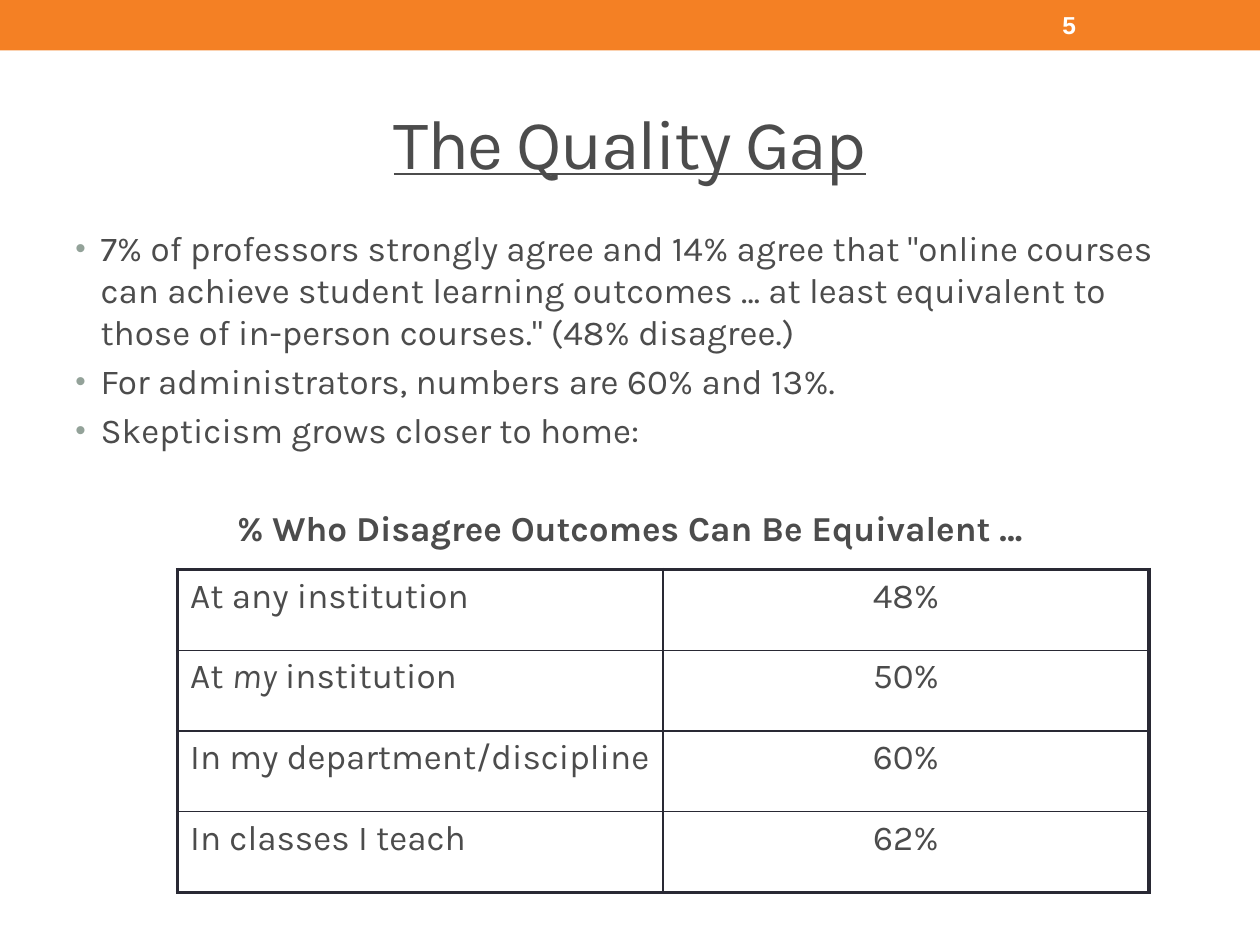
"""Build the quality gap slide with its bullets and table."""
from lxml import etree
from pptx import Presentation
from pptx.dml.color import RGBColor
from pptx.enum.shapes import MSO_SHAPE
from pptx.enum.text import MSO_ANCHOR, PP_ALIGN
from pptx.oxml.ns import qn
from pptx.util import Pt

RECT = MSO_SHAPE.RECTANGLE
TOP, MID = MSO_ANCHOR.TOP, MSO_ANCHOR.MIDDLE
LEFT, MIDST = PP_ALIGN.LEFT, PP_ALIGN.CENTER
HUES = {"bar": "F48024", "text": "4C4C4C", "dot": "93A299",
        "rule": "292934", "page": "FFFFFF"}
BODY = {"name": "Karla", "size": Pt(20), "hue": "text"}
BOLD = {**BODY, "bold": True}
HEAD = {**BODY, "size": Pt(40), "underline": True}
PAGE = {"name": "Arial", "size": Pt(14), "hue": "page", "bold": True}

TITLE = "The Quality Gap"
POINTS = [
    '7% of professors strongly agree and 14% agree that "online courses '
    'can achieve student learning outcomes … at least equivalent to '
    'those of in-person courses." (48% disagree.)',
    "For administrators, numbers are 60% and 13%.",
    "Skepticism grows closer to home:",
]
CAPTION = "% Who Disagree Outcomes Can Be Equivalent …"
ROWS = [
    (["At any institution"], "48%"),
    (["At ", "my", " institution"], "50%"),
    (["In my department/discipline"], "60%"),
    (["In classes I teach"], "62%"),
]
GRID = (101.5, 325.5, 555, 184.4)
THICK, THIN, GAP = 2.25, 1, 4


def tint(hue):
    return RGBColor.from_string(HUES[hue])


def write(para, text, style, align=LEFT, gap=0):
    para.alignment = align
    para.space_before = Pt(gap)
    run = para.add_run()
    run.text = text
    for key, val in style.items():
        if key == "hue":
            run.font.color.rgb = tint(val)
        else:
            setattr(run.font, key, val)
    return run


def add_box(slide, area, anchor):
    frame = slide.shapes.add_textbox(*map(Pt, area)).text_frame
    frame.word_wrap = True
    frame.vertical_anchor = anchor
    return frame


def add_dot(para):
    props = para._p.get_or_add_pPr()
    props.set("marL", str(Pt(14.4)))
    props.set("indent", str(Pt(-14.4)))
    color = etree.SubElement(props, qn("a:buClr"))
    etree.SubElement(color, qn("a:srgbClr"), val=HUES["dot"])
    etree.SubElement(props, qn("a:buSzPct"), val="85000")
    etree.SubElement(props, qn("a:buFont"), typeface="Arial")
    etree.SubElement(props, qn("a:buChar"), char="•")


def add_rules(cell, edges):
    props = cell._tc.get_or_add_tcPr()
    for spot, (side, outer) in enumerate(edges.items()):
        width = Pt(THICK if outer else THIN)
        line = etree.Element(qn(f"a:ln{side}"), w=str(width))
        fill = etree.SubElement(line, qn("a:solidFill"))
        etree.SubElement(fill, qn("a:srgbClr"), val=HUES["rule"])
        props.insert(spot, line)


def add_grid(slide):
    last = len(ROWS) - 1
    table = slide.shapes.add_table(len(ROWS), 2, *map(Pt, GRID)).table
    table.first_row = table.horz_banding = False
    for r, (label, share) in enumerate(ROWS):
        for c, parts in enumerate((label, [share])):
            cell = table.cell(r, c)
            cell.fill.background()
            para = cell.text_frame.paragraphs[0]
            for n, part in enumerate(parts):
                run = write(para, part, BODY, MIDST if c else LEFT, GAP)
                run.font.italic = n == 1
            add_rules(cell, {"L": c == 0, "R": c == 1,
                             "T": r == 0, "B": r == last})


def main():
    deck = Presentation()
    deck.slide_width, deck.slide_height = Pt(720), Pt(540)
    slide = deck.slides.add_slide(deck.slide_layouts[6])

    bar = slide.shapes.add_shape(RECT, 0, 0, deck.slide_width, Pt(28.8))
    bar.shadow.inherit = False
    bar.fill.solid()
    bar.fill.fore_color.rgb = tint("bar")
    bar.line.fill.background()

    page = add_box(slide, (600, 1.4, 84, 26), MID)
    write(page.paragraphs[0], "5", PAGE)
    title = add_box(slide, (36, 42, 648, 78), MID)
    run = write(title.paragraphs[0], TITLE, HEAD, MIDST)
    run._r.get_or_add_rPr().set("spc", "-100")

    body = add_box(slide, (36, 126, 648, 384), TOP)
    for n, point in enumerate(POINTS):
        para = body.add_paragraph() if n else body.paragraphs[0]
        write(para, point, BODY, LEFT, GAP)
        add_dot(para)
    write(body.add_paragraph(), CAPTION, BOLD, MIDST, 32)
    add_grid(slide)
    deck.save("out.pptx")


if __name__ == "__main__":
    main()
